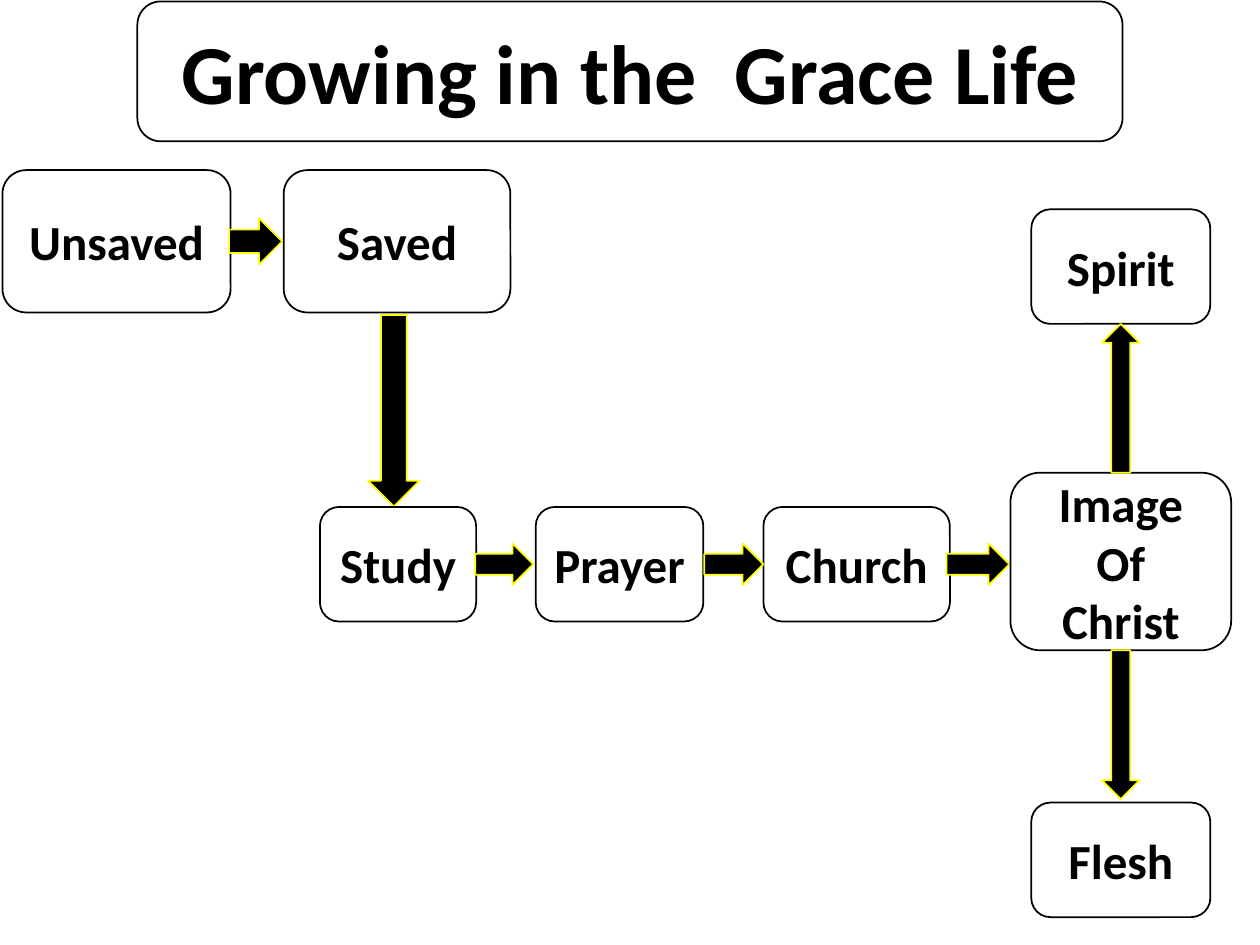
from pptx import Presentation
from pptx.dml.color import RGBColor
from pptx.enum.shapes import MSO_SHAPE
from pptx.enum.text import MSO_ANCHOR, PP_ALIGN
from pptx.util import Cm, Pt

ROUND = MSO_SHAPE.ROUNDED_RECTANGLE
RIGHT = MSO_SHAPE.RIGHT_ARROW
UP = MSO_SHAPE.UP_ARROW
DOWN = MSO_SHAPE.DOWN_ARROW
MIDDLE = MSO_ANCHOR.MIDDLE
CENTER = PP_ALIGN.CENTER
BLACK, YELLOW = "000000", "FFFF00"


def color(value):
    """Return the colour for a hex string."""
    return RGBColor.from_string(value)


def add_outline(s, kind, x, y, w, h, line):
    """Add a preset shape with a one-point outline, measured in centimetres."""
    sp = s.shapes.add_shape(kind, Cm(x), Cm(y), Cm(w), Cm(h))
    sp.shadow.inherit = False
    sp.line.color.rgb = color(line)
    sp.line.width = Pt(1)
    return sp


def add_box(s, x, y, w, h, lines, size=28):
    """Add an unfilled rounded box with one centred paragraph per line."""
    sp = add_outline(s, ROUND, x, y, w, h, BLACK)
    sp.fill.background()
    tf = sp.text_frame
    tf.word_wrap = True
    tf.vertical_anchor = MIDDLE
    tf.margin_left = tf.margin_right = Cm(0)
    for i, line in enumerate(lines):
        p = tf.add_paragraph() if i else tf.paragraphs[0]
        p.alignment = CENTER
        r = p.add_run()
        r.text = line
        r.font.name = "Calibri"
        r.font.size = Pt(size)
        r.font.bold = True
        r.font.color.rgb = color(BLACK)


def add_arrow(s, kind, x, y, w, h):
    """Add a black block arrow with a yellow edge."""
    sp = add_outline(s, kind, x, y, w, h, YELLOW)
    sp.fill.solid()
    sp.fill.fore_color.rgb = color(BLACK)


def add_row(s, x, y, h, steps, arrows, arrow_h):
    """Place boxes and the centred right arrows that link them in one row."""
    for label, dx, w in steps:
        add_box(s, x + dx, y, w, h, [label])
    for dx, w in arrows:
        add_arrow(s, RIGHT, x + dx, y + (h - arrow_h) / 2, w, arrow_h)


def add_salvation(s, x, y):
    """Place the move from unsaved to saved and the arrow leading down."""
    steps = [("Unsaved", 0, 4.6), ("Saved", 5.67, 4.57)]
    add_row(s, x, y, 2.87, steps, [(4.57, 1.07)], 0.94)
    add_arrow(s, DOWN, x + 7.37, y + 2.92, 1.04, 3.86)


def add_practices(s, x, y):
    """Place the row of practices and the arrows between them."""
    steps = [("Study", 0, 3.15), ("Prayer", 4.35, 3.38), ("Church", 8.94, 3.76)]
    arrows = [(3.13, 1.17), (7.75, 1.19), (12.63, 1.27)]
    add_row(s, x, y, 2.31, steps, arrows, 0.84)


def add_outcomes(s, x, y, w):
    """Place the central image box with spirit above and flesh below."""
    end_w, end_h, arrow_w = 3.61, 2.31, 0.76
    add_box(s, x, y + 5.31, w, 3.58, ["Image", "Of", "Christ"])
    for label, dy in (("Spirit", 0), ("Flesh", 11.96)):
        add_box(s, x + (w - end_w) / 2, y + dy, end_w, end_h, [label])
    for kind, dy in ((UP, 2.31), (DOWN, 8.89)):
        add_arrow(s, kind, x + (w - arrow_w) / 2, y + dy, arrow_w, 3)


def main():
    """Build and save the slide."""
    prs = Presentation()
    prs.slide_width, prs.slide_height = Cm(25.4), Cm(19.05)
    s = prs.slides.add_slide(prs.slide_layouts[6])
    add_box(s, 2.77, 0.03, 19.86, 2.82, ["Growing in the  Grace Life"], 48)
    add_salvation(s, 0.05, 3.43)
    add_practices(s, 6.45, 10.22)
    add_outcomes(s, 20.37, 4.22, 4.45)
    prs.save("out.pptx")


if __name__ == "__main__":
    main()
